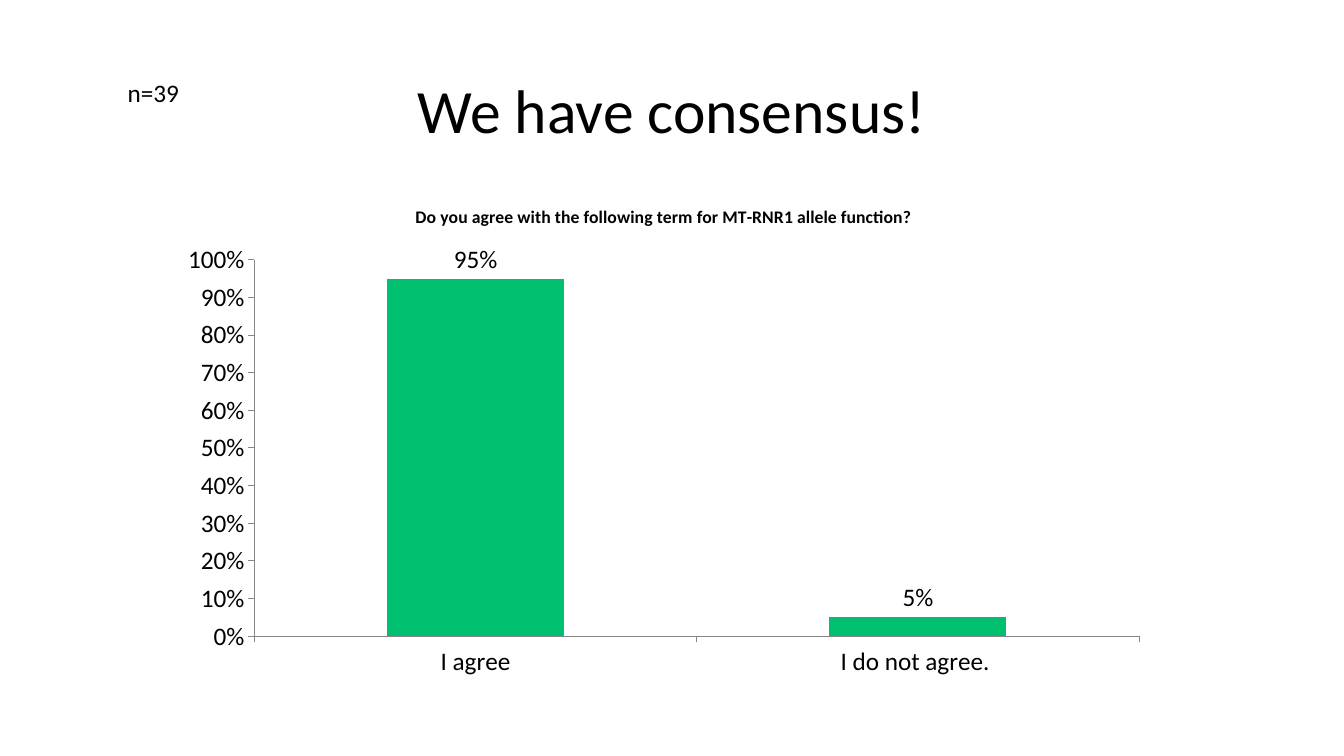
from pptx import Presentation
from pptx.chart.data import CategoryChartData
from pptx.dml.color import RGBColor
from pptx.enum.chart import XL_CHART_TYPE, XL_LABEL_POSITION, XL_TICK_MARK
from pptx.enum.text import MSO_ANCHOR, MSO_AUTO_SIZE, PP_ALIGN
from pptx.util import Cm, Pt

FONT = "Calibri"
BLACK = "000000"
GREEN = "00BF6F"
GREY = "868686"


def color(value):
    return RGBColor.from_string(value)


def style(font, size, bold=False):
    font.name = FONT
    font.size = Pt(size)
    font.bold = bold
    font.color.rgb = color(BLACK)


def add_run(p, text, size, bold=False):
    r = p.add_run()
    r.text = text
    style(r.font, size, bold)


def add_title(s, text, x, y, w, h):
    sp = s.shapes.title
    sp.left, sp.top, sp.width, sp.height = Cm(x), Cm(y), Cm(w), Cm(h)
    tf = sp.text_frame
    tf.word_wrap = True
    tf.vertical_anchor = MSO_ANCHOR.MIDDLE
    p = tf.paragraphs[0]
    p.alignment = PP_ALIGN.CENTER
    p.line_spacing = 0.9
    add_run(p, text, 44)


def add_sample_size(s, text, x, y, w, h):
    tf = s.shapes.add_textbox(Cm(x), Cm(y), Cm(w), Cm(h)).text_frame
    tf.word_wrap = False
    tf.auto_size = MSO_AUTO_SIZE.SHAPE_TO_FIT_TEXT
    add_run(tf.paragraphs[0], text, 18)


def format_axis(axis):
    axis.has_major_gridlines = False
    axis.major_tick_mark = XL_TICK_MARK.OUTSIDE
    axis.minor_tick_mark = XL_TICK_MARK.NONE
    axis.format.line.color.rgb = color(GREY)
    axis.format.line.width = Pt(0.75)
    style(axis.tick_labels.font, 18)


def add_vote_chart(s, question, votes, x, y, w, h):
    data = CategoryChartData(number_format="0%")
    data.categories = list(votes)
    data.add_series("Series 1", list(votes.values()))
    chart = s.shapes.add_chart(
        XL_CHART_TYPE.COLUMN_CLUSTERED, Cm(x), Cm(y), Cm(w), Cm(h), data
    ).chart
    style(chart.font, 10.5)
    chart.has_legend = False
    chart.has_title = True
    add_run(chart.chart_title.text_frame.paragraphs[0], question, 12.6, True)

    format_axis(chart.category_axis)
    axis = chart.value_axis
    format_axis(axis)
    axis.minimum_scale, axis.maximum_scale, axis.major_unit = 0, 1, 0.1
    axis.tick_labels.number_format = "0%"
    axis.tick_labels.number_format_is_linked = False

    plot = chart.plots[0]
    plot.gap_width = 150
    plot.vary_by_categories = False
    fill = plot.series[0].format.fill
    fill.solid()
    fill.fore_color.rgb = color(GREEN)
    plot.has_data_labels = True
    labels = plot.data_labels
    labels.show_value = True
    labels.number_format = "0%"
    labels.number_format_is_linked = False
    labels.position = XL_LABEL_POSITION.OUTSIDE_END
    style(labels.font, 18)


def main():
    prs = Presentation()
    prs.slide_width, prs.slide_height = Cm(33.87), Cm(19.05)
    s = prs.slides.add_slide(prs.slide_layouts[5])
    add_vote_chart(
        s,
        "Do you agree with the following term for MT-RNR1 allele function?",
        {"I agree": 0.95, "I do not agree. ": 0.05},
        4.24, 4.7, 24.97, 12.6,
    )
    add_title(s, "We have consensus!", 2.33, 1.02, 29.21, 3.68)
    add_sample_size(s, "n=39", 2.97, 1.83, 1.83, 1.02)
    prs.save("out.pptx")


if __name__ == "__main__":
    main()
